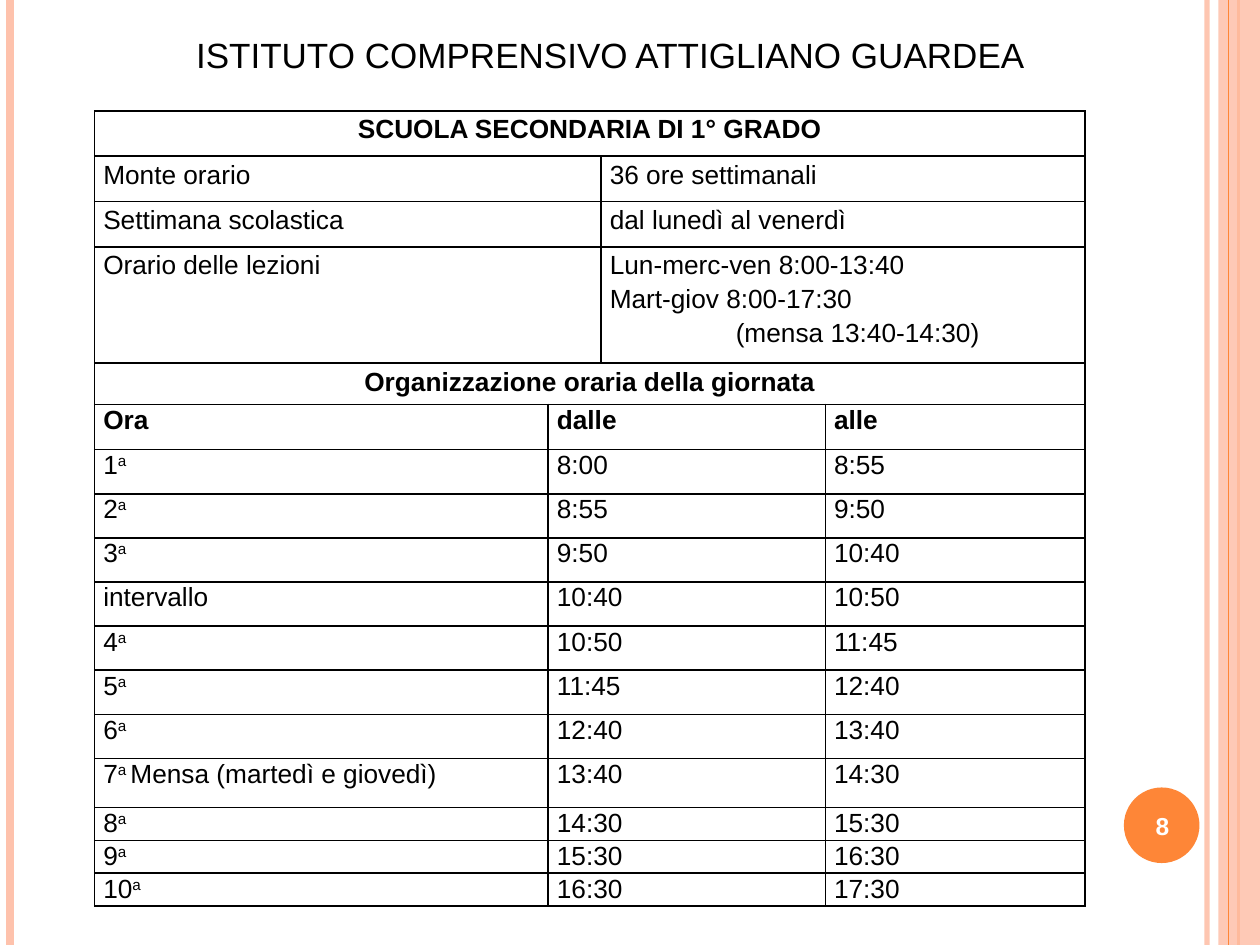
from dataclasses import dataclass

from lxml.etree import SubElement
from pptx import Presentation
from pptx.dml.color import RGBColor as RGB
from pptx.enum.shapes import MSO_CONNECTOR as Conn, MSO_SHAPE as Shape
from pptx.enum.text import MSO_ANCHOR as Anchor, MSO_AUTO_SIZE as Auto, PP_ALIGN as Align
from pptx.oxml import parse_xml
from pptx.oxml.ns import nsdecls, qn
from pptx.util import Inches, Pt


@dataclass(frozen=True)
class Theme:
    font: str = "Arial"
    ink: str = "000000"
    white: str = "FFFFFF"
    peach: str = "FEC2AC"
    orange: str = "FE8637"
    title: int = 20
    body: int = 15
    badge: int = 14


THEME = Theme()

COLS = [3.6, 0.42, 1.78, 2.06]
ROWS = [0.36] * 3 + [0.92, 0.32] + [0.35] * 8 + [0.39] + [0.26] * 3

FACTS = [
    ("Monte orario", ["36 ore settimanali"]),
    ("Settimana scolastica", ["dal lunedì al venerdì"]),
    ("Orario delle lezioni", ["Lun-merc-ven 8:00-13:40", "Mart-giov 8:00-17:30",
                              "(mensa 13:40-14:30)"]),
]

# Each period ends when the next begins
TIMES = ["8:00", "8:55", "9:50", "10:40", "10:50", "11:45", "12:40",
         "13:40", "14:30", "15:30", "16:30", "17:30"]
HOURS = ["1", "2", "3", "intervallo", "4", "5", "6", "7", "8", "9", "10"]
NOTES = {"7": "Mensa (martedì e giovedì)"}


def style(para, size, color=THEME.ink, bold=False, align=Align.LEFT):
    font = para.font
    font.name, font.size, font.bold = THEME.font, Pt(size), bold
    font.color.rgb = RGB.from_string(color)
    para.alignment = align


def fade(fill, alpha):
    color = fill._xPr.find(".//" + qn("a:srgbClr"))
    SubElement(color, qn("a:alpha")).set("val", str(alpha * 1000))


def add_rule(slide, x, top, height, color, width, alpha=100):
    line = slide.shapes.add_connector(
        Conn.STRAIGHT, Inches(x), Inches(top), Inches(x), Inches(top + height))
    line.line.color.rgb = RGB.from_string(color)
    line.line.width = Pt(width)
    if alpha < 100:
        fade(line.line.fill, alpha)
    SubElement(line._element.spPr, qn("a:effectLst"))


def add_solid(slide, kind, box, color):
    shape = slide.shapes.add_shape(kind, *map(Inches, box))
    shape.shadow.inherit = False
    shape.fill.solid()
    shape.fill.fore_color.rgb = RGB.from_string(color)
    shape.line.fill.background()
    return shape


def add_text(slide, box, text, size, color=THEME.ink, bold=False):
    frame = slide.shapes.add_textbox(*map(Inches, box)).text_frame
    frame.word_wrap = True
    frame.vertical_anchor = Anchor.MIDDLE
    frame.text = text
    style(frame.paragraphs[0], size, color, bold, Align.CENTER)
    return frame


def add_frame(slide, box):
    """Stripes along both edges of the page."""
    left, top, width, height = box
    right = left + width
    add_rule(slide, right - 0.42, top, height, THEME.peach, 3, 93)
    add_rule(slide, left + 0.08, top, height, THEME.peach, 4.5)
    add_rule(slide, right - 0.17, top, height, THEME.orange, 1.5)
    band = add_solid(slide, Shape.RECTANGLE, (right - 0.33, top, 0.33, height), THEME.peach)
    fade(band.fill, 87)
    add_rule(slide, right - 0.25, top, height, THEME.orange, 0.75)


def add_badge(slide, box, number):
    """Page number on a disc."""
    left, top, width, height = box
    add_solid(slide, Shape.OVAL, box, THEME.orange)
    add_text(slide, (left - 0.03, top + 0.02, width + 0.07, height - 0.03),
             number, THEME.badge, THEME.white, True)


def add_title(slide, box, text):
    frame = add_text(slide, box, text, THEME.title)
    frame.auto_size = Auto.SHAPE_TO_FIT_TEXT


def set_borders(cell):
    props = cell._tc.get_or_add_tcPr()
    for spot, side in enumerate(("lnL", "lnR", "lnT", "lnB")):
        props.insert(spot, parse_xml(
            f'<a:{side} {nsdecls("a")} w="{Pt(1)}"><a:solidFill>'
            f'<a:srgbClr val="{THEME.ink}"/></a:solidFill></a:{side}>'))


def fill_cell(cell, lines, top=0.01, bottom=0, bold=False, align=Align.LEFT, space=None):
    cell.margin_left = cell.margin_right = Inches(0.07)
    cell.margin_top, cell.margin_bottom = Inches(top), Inches(bottom)
    frame = cell.text_frame
    frame.text = "\n".join(lines)
    for para in frame.paragraphs:
        style(para, THEME.body, bold=bold, align=align)
        if space:
            para.line_spacing = space
    return frame.paragraphs


def fill_hour(cell, hour):
    para = fill_cell(cell, [hour])[0]
    if hour.isdigit():
        note = NOTES.get(hour)
        mark = para.add_run()
        mark.text = "a " if note else "a"
        mark._r.get_or_add_rPr().set("baseline", "30000")
        if note:
            para.add_run().text = note


def fill_time(cell, time):
    para = fill_cell(cell, [time])[0]
    if int(time.split(":")[0]) >= 14:
        para.alignment = Align.JUSTIFY
        para.space_after = Pt(3)


def add_plan(slide, box):
    """Timetable: school facts above, periods of the day below."""
    table = slide.shapes.add_table(len(ROWS), len(COLS), *map(Inches, box)).table
    table.first_row = table.horz_banding = False
    for col, width in zip(table.columns, COLS):
        col.width = Inches(width)
    for row, height in zip(table.rows, ROWS):
        row.height = Inches(height)
    for cell in table.iter_cells():
        cell.fill.background()
        set_borders(cell)

    def span(row, first, last):
        cell = table.cell(row, first)
        cell.merge(table.cell(row, last))
        return cell

    # School facts
    fill_cell(span(0, 0, 3), ["SCUOLA SECONDARIA DI 1° GRADO"], 0,
              bold=True, align=Align.CENTER, space=1.15)
    for row, (label, lines) in enumerate(FACTS, 1):
        fill_cell(span(row, 0, 1), [label], 0, space=1.15)
        paras = fill_cell(span(row, 2, 3), lines, 0, space=1.15)
    paras[-1]._p.get_or_add_pPr().set("marL", str(Inches(1)))

    # Periods of the day
    fill_cell(span(4, 0, 3), ["Organizzazione oraria della giornata"], 0.04, 0.04,
              bold=True, align=Align.CENTER)
    heads = (table.cell(5, 0), span(5, 1, 2), table.cell(5, 3))
    for cell, text in zip(heads, ("Ora", "dalle", "alle")):
        fill_cell(cell, [text], bottom=0.1, bold=True)
    for row, (hour, start, end) in enumerate(zip(HOURS, TIMES, TIMES[1:]), 6):
        fill_hour(table.cell(row, 0), hour)
        fill_time(span(row, 1, 2), start)
        fill_time(table.cell(row, 3), end)


def main():
    deck = Presentation()
    deck.slide_width, deck.slide_height = Inches(10), Inches(7.5)
    slide = deck.slides.add_slide(deck.slide_layouts[6])
    add_frame(slide, (0, 0, 10, 7.5))
    add_title(slide, (0.75, 0.21, 8.19, 0.44), "ISTITUTO COMPRENSIVO ATTIGLIANO GUARDEA")
    add_badge(slide, (8.92, 6.25, 0.6, 0.6), "8")
    add_plan(slide, (0.75, 0.88, sum(COLS), sum(ROWS)))
    deck.save("out.pptx")


if __name__ == "__main__":
    main()
